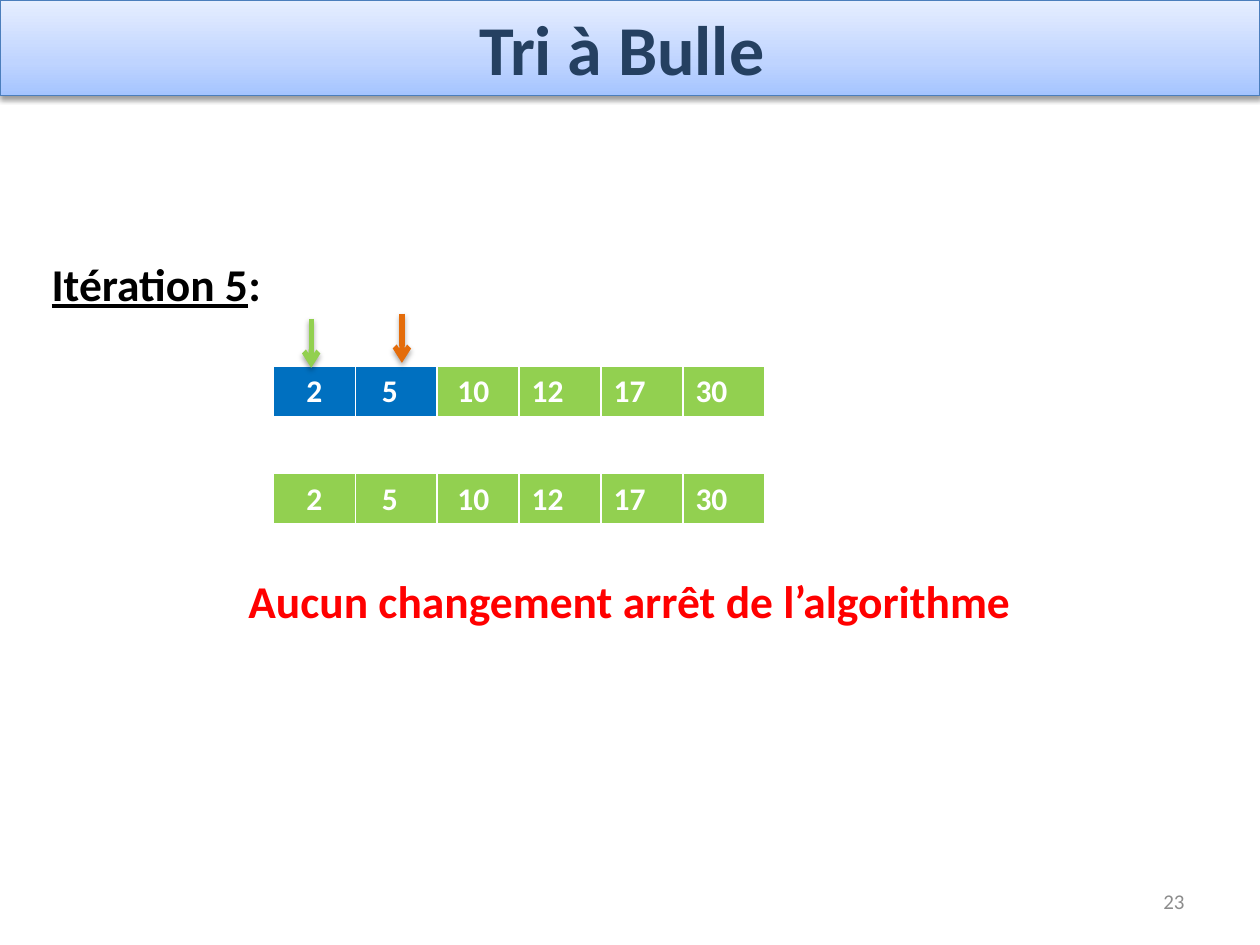
from lxml import etree
from pptx import Presentation
from pptx.dml.color import RGBColor
from pptx.enum import shapes, text
from pptx.oxml import parse_xml
from pptx.oxml.ns import nsdecls, qn
from pptx.util import Inches, Pt

WHITE, GREEN, BLUE, ORANGE = "FFFFFF", "92D050", "0070C0", "E46C0A"
LEFT, CENTER, RIGHT = text.PP_ALIGN.LEFT, text.PP_ALIGN.CENTER, text.PP_ALIGN.RIGHT


def rgb(value):
    return RGBColor.from_string(value)


def add_text(p, words, size=26, color="000000", bold=True, underline=False, align=LEFT):
    p.alignment = align
    r = p.add_run()
    r.text = words
    r.font.name, r.font.size = "Calibri", Pt(size)
    r.font.bold, r.font.underline = bold, underline
    r.font.color.rgb = rgb(color)


prs = Presentation()
prs.slide_width, prs.slide_height = Inches(10), Inches(7.5)
s = prs.slides.add_slide(prs.slide_layouts[1])

# Title band with gradient
title, body = s.shapes.title, s.placeholders[1]
title.left, title.top, title.width, title.height = 0, 0, Inches(10), Inches(0.76)
stops = "".join(f'<a:gs pos="{pos}"><a:srgbClr val="{color}"/></a:gs>'
                for pos, color in [(0, "A4C4FF"), (35000, "BFD4FF"), (100000, "E6EEFF")])
title._element.spPr.append(parse_xml(
    f'<a:gradFill {nsdecls("a")} rotWithShape="1"><a:gsLst>{stops}</a:gsLst>'
    '<a:lin ang="16200000" scaled="0"/></a:gradFill>'))
title.line.color.rgb = rgb("4B7EBC")
title.line.width = Pt(0.75)
tf = title.text_frame
tf.auto_size = text.MSO_AUTO_SIZE.NONE
tf.vertical_anchor = text.MSO_ANCHOR.MIDDLE
tf.margin_right = Inches(0.23)
add_text(tf.paragraphs[0], "Tri à Bulle", size=40, color="254061", align=CENTER)

# Body: iteration heading and conclusion
body.left, body.top = Inches(0.31), Inches(0.94)
body.width, body.height = Inches(9.38), Inches(6.09)
tf = body.text_frame
tf.auto_size = text.MSO_AUTO_SIZE.NONE
tf.margin_top = Inches(1.09)
heading, conclusion = tf.paragraphs[0], tf.add_paragraph()
for p in (heading, conclusion):
    pPr = p._p.get_or_add_pPr()
    pPr.set("marL", "0")
    pPr.set("indent", "0")
    etree.SubElement(pPr, qn("a:buNone"))
    p.space_before = Pt(0)
conclusion.space_before = Pt(150)
add_text(heading, "Itération 5", underline=True)
add_text(heading, ":")
add_text(conclusion, "Aucun changement arrêt de l’algorithme", color="FF0000", align=CENTER)

# Slide number
sp = s.shapes.add_textbox(Inches(7.17), Inches(6.95), Inches(2.33), Inches(0.4))
tf = sp.text_frame
tf.word_wrap = True
tf.vertical_anchor = text.MSO_ANCHOR.MIDDLE
add_text(tf.paragraphs[0], "23", size=12, color="8C8C8C", bold=False, align=RIGHT)

# Array before and after the pass
values = ["2", "5", "10", "12", "17", "30"]
indents = [0.1, 0.21, 0.16, 0.1, 0.1, 0.1]
for top, compared in [(2.91, 2), (3.76, 0)]:
    table = s.shapes.add_table(1, len(values), Inches(2.17), Inches(top),
                               Inches(3.9), Inches(0.41)).table
    for i, (value, indent) in enumerate(zip(values, indents)):
        table.columns[i].width = Inches(0.65)
        cell = table.cell(0, i)
        cell.margin_left = Inches(indent)
        add_text(cell.text_frame.paragraphs[0], value, size=18, color=WHITE,
                 align=LEFT if i else CENTER)
        for side, width in [("L", 1), ("R", 1), ("T", 1), ("B", 3)]:
            cell._tc.get_or_add_tcPr().append(parse_xml(
                f'<a:ln{side} {nsdecls("a")} w="{Pt(width)}"><a:solidFill>'
                f'<a:srgbClr val="{WHITE}"/></a:solidFill></a:ln{side}>'))
        cell.fill.solid()
        cell.fill.fore_color.rgb = rgb(BLUE if i < compared else GREEN)

# Arrows on the compared cells
shadowed = [(title, 38, 1.6)]
for x, y, color in [(2.47, 2.53, GREEN), (3.19, 2.49, ORANGE)]:
    arrow = s.shapes.add_connector(shapes.MSO_CONNECTOR.STRAIGHT, Inches(x), Inches(y),
                                   Inches(x), Inches(y + 0.39))
    arrow.line.color.rgb = rgb(color)
    arrow.line.width = Pt(3)
    etree.SubElement(arrow.line._get_or_add_ln(), qn("a:tailEnd"), type="arrow")
    shadowed.append((arrow, 35, 1.8))

# Soft shadows below the band and arrows
for sp, opacity, distance in shadowed:
    sp._element.spPr.append(parse_xml(
        f'<a:effectLst {nsdecls("a")}><a:outerShdw blurRad="{Pt(3.1)}" dist="{Pt(distance)}" '
        f'dir="5400000" rotWithShape="0"><a:srgbClr val="000000"><a:alpha val="{opacity * 1000}"/>'
        '</a:srgbClr></a:outerShdw></a:effectLst>'))

prs.save("out.pptx")
